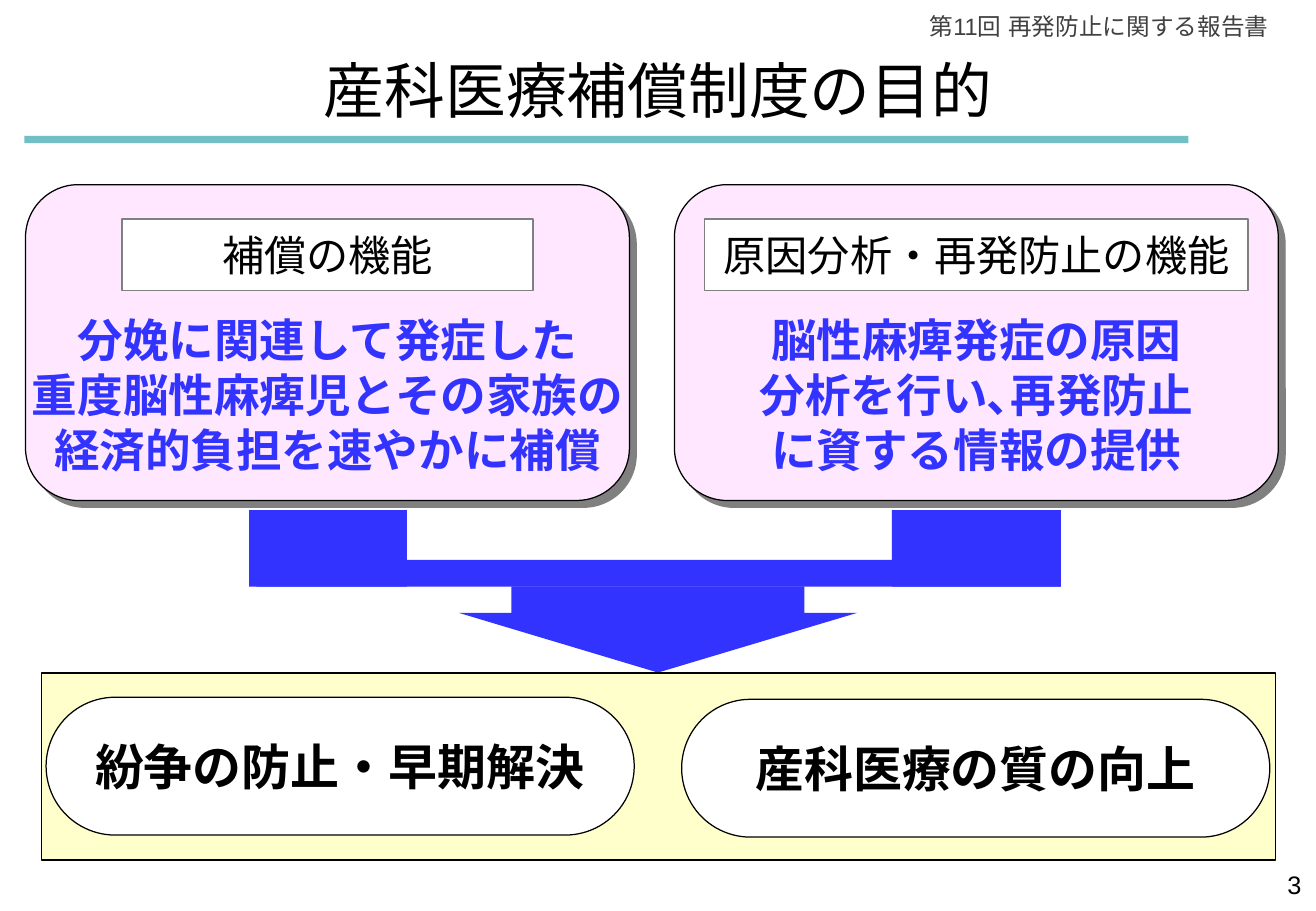
from lxml.etree import SubElement
from pptx import Presentation
from pptx.dml.color import RGBColor
from pptx.enum.lang import MSO_LANGUAGE_ID
from pptx.enum.shapes import MSO_SHAPE
from pptx.enum.text import MSO_ANCHOR, PP_ALIGN
from pptx.oxml.ns import qn
from pptx.util import Inches, Pt

HUES = {
    "teal": "72BFC5", "pink": "FFE7FF", "cream": "FFFFCC", "white": "FFFFFF",
    "blue": "3333FF", "black": "000000", "gray": "808080", "dark": "404040",
}
WIDE, HIGH = 10.83, 7.5
PAGE = (0, 0, WIDE, HIGH)


def part(box, left, top, wide, high):
    x, y, w, h = box
    return (x + w * left / 100, y + h * top / 100, w * wide / 100, h * high / 100)


def hue(name):
    return RGBColor.from_string(HUES[name])


def write(shape, text, size, color="black", bold=False, face="Arial",
          align=PP_ALIGN.CENTER, anchor=MSO_ANCHOR.MIDDLE, wrap=False):
    frame = shape.text_frame
    frame.word_wrap = wrap
    frame.vertical_anchor = anchor
    para = frame.paragraphs[0]
    para.alignment = align
    for row, line in enumerate(text.split("\n")):
        if row:
            para.add_line_break()
        run = para.add_run()
        run.text = line
        font = run.font
        font.size = Pt(size)
        font.bold = bold
        font.name = face
        font.color.rgb = hue(color)
        font.language_id = MSO_LANGUAGE_ID.JAPANESE
        SubElement(font._element, qn("a:ea")).set("typeface", face)


def label(slide, box, text, size, **style):
    area = slide.shapes.add_textbox(*map(Inches, box))
    write(area, text, size, **style)


def block(slide, box, fill, kind=MSO_SHAPE.RECTANGLE, line=None, width=0.75, bends=()):
    shape = slide.shapes.add_shape(kind, *map(Inches, box))
    shape.shadow.inherit = False
    shape.fill.solid()
    shape.fill.fore_color.rgb = hue(fill)
    if line:
        shape.line.color.rgb = hue(line)
        shape.line.width = Pt(width)
    else:
        shape.line.fill.background()
    for spot, bend in enumerate(bends):
        shape.adjustments[spot] = bend
    return shape


def shade(shape):
    glow = shape._element.spPr.find(qn("a:effectLst"))
    drop = SubElement(glow, qn("a:outerShdw"), dist=str(Pt(5.7)),
                      dir="2700000", algn="ctr", rotWithShape="0")
    SubElement(drop, qn("a:srgbClr"), val=HUES["gray"])


def header(slide, box):
    block(slide, part(box, 1.85, 14.93, 88.46, 0.8), "teal")
    label(slide, part(box, 68.14, 0.67, 29.18, 4.53), "第11回 再発防止に関する報告書",
          14, color="dark", align=PP_ALIGN.RIGHT, anchor=MSO_ANCHOR.TOP, wrap=True)
    label(slide, part(box, 23.36, 5.07, 53.28, 9.47), "産科医療補償制度の目的",
          36, face="Noto Sans CJK JP")


def card(slide, box, head, share, text):
    shade(block(slide, box, "pink", MSO_SHAPE.ROUNDED_RECTANGLE, "black", bends=[0.167]))
    tag = block(slide, part(box, (100 - share) / 2, 10.8, share, 22.7),
                "white", line="gray", width=1)
    write(tag, head, 25)
    label(slide, part(box, -2, 38.46, 104, 55.8), text, 27,
          color="blue", bold=True, anchor=MSO_ANCHOR.TOP)


def flow(slide, box):
    for bar in ((0, 0, 19.46, 47), (79.2, 0, 20.8, 47), (0.9, 30.6, 99.1, 16.4)):
        block(slide, part(box, *bar), "blue")
    block(slide, part(box, 25.82, 46.8, 49.1, 53), "blue",
          MSO_SHAPE.DOWN_ARROW, bends=[0.735, 0.692])


def goals(slide, box):
    block(slide, box, "cream", line="black")
    for left, top, text in ((0.39, 13, "紛争の防止・早期解決"),
                            (51.87, 14.1, "産科医療の質の向上")):
        pill = block(slide, part(box, left, top, 47.64, 73.7), "white",
                     MSO_SHAPE.ROUNDED_RECTANGLE, "black", bends=[0.5])
        write(pill, text, 29, bold=True, wrap=True)


def footer(slide, box):
    label(slide, part(box, 76.45, 94.8, 23.36, 5.2), "3", 15,
          align=PP_ALIGN.RIGHT, anchor=MSO_ANCHOR.TOP, wrap=True)


def main():
    deck = Presentation()
    deck.slide_width, deck.slide_height = Inches(WIDE), Inches(HIGH)
    slide = deck.slides.add_slide(deck.slide_layouts[6])
    header(slide, PAGE)
    cards = (
        (1.94, "補償の機能", 68,
         "分娩に関連して発症した\n重度脳性麻痺児とその家族の\n経済的負担を速やかに補償"),
        (51.25, "原因分析・再発防止の機能", 90,
         "脳性麻痺発症の原因\n分析を行い､再発防止\nに資する情報の提供"),
    )
    for left, head, share, text in cards:
        card(slide, part(PAGE, left, 20.27, 45.89, 34.67), head, share, text)
    flow(slide, part(PAGE, 18.93, 56, 61.68, 17.87))
    goals(slide, part(PAGE, 3.14, 73.87, 93.81, 20.53))
    footer(slide, PAGE)
    deck.save("out.pptx")


if __name__ == "__main__":
    main()
